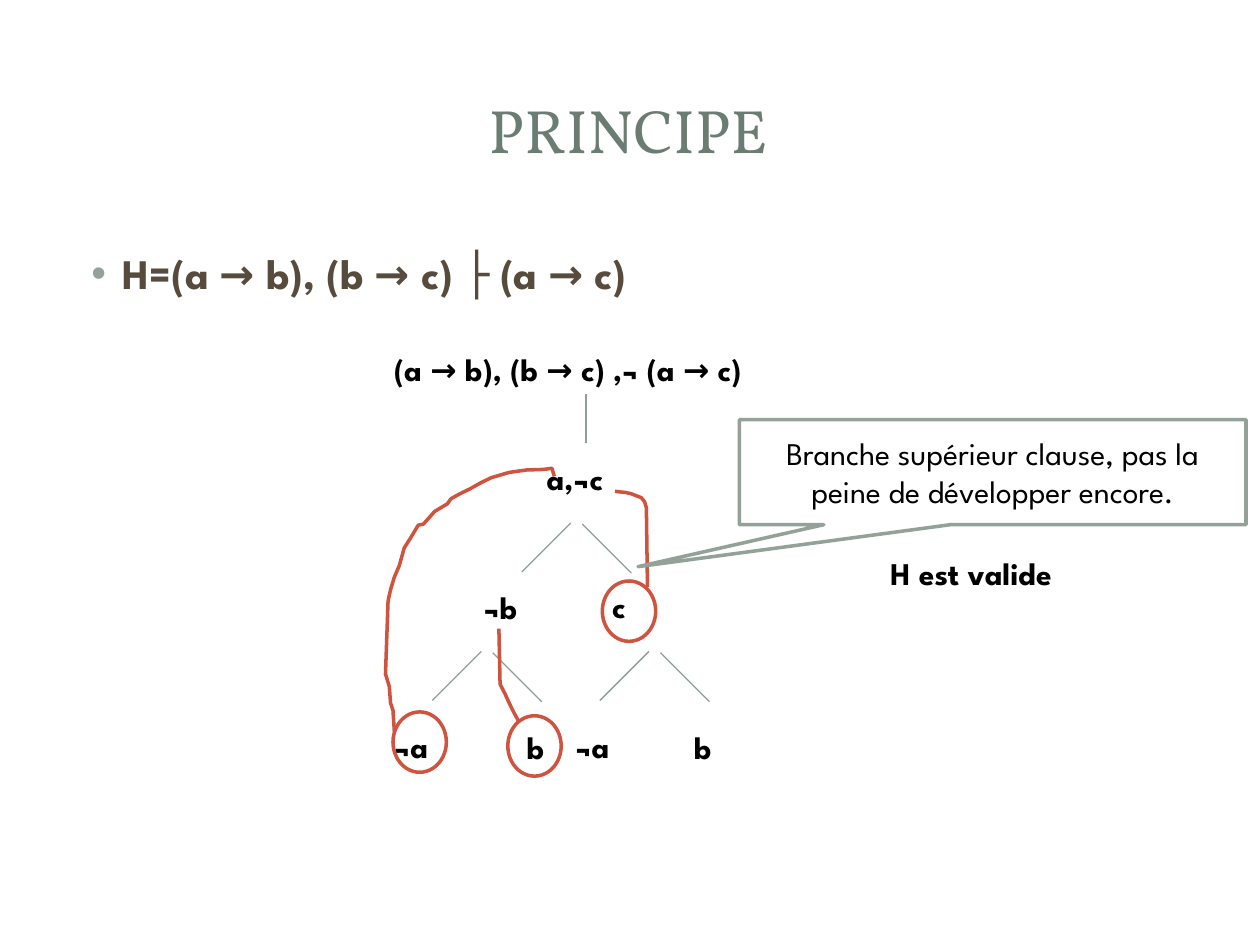
"""Build the slide that explains the principle of the proof tree."""
from dataclasses import dataclass

from lxml import etree
from pptx import Presentation, util as u
from pptx.dml.color import RGBColor
from pptx.enum import shapes, text
from pptx.oxml.ns import qn


@dataclass(frozen=True)
class Theme:
    heading: str = "Vollkorn"
    body: str = "League Spartan"
    title_ink: str = "6B7D72"
    body_ink: str = "564B3C"
    ink: str = "000000"
    accent: str = "93A299"
    branch: str = "8F9F96"
    clash: str = "CF543F"
    paper: str = "FFFFFF"
    title_size: float = 35
    body_size: float = 24
    node_size: float = 18
    branch_width: float = 0.75
    stroke_width: float = 2


class Board:
    def __init__(self, slide, theme):
        self.slide, self.theme = slide, theme

    def place(self, item, box):
        for side, value in zip(("left", "top", "width", "height"), box):
            setattr(item, side, u.Pt(value))

    def letter(self, item, words, size, ink, name=None, bold=False, align=text.PP_ALIGN.LEFT):
        paragraph = item.text_frame.paragraphs[0]
        paragraph.alignment = align
        run = paragraph.add_run()
        run.text = words
        looks = {"name": name or self.theme.body, "size": u.Pt(size), "bold": bold}
        for key, value in looks.items():
            setattr(run.font, key, value)
        run.font.color.rgb = RGBColor.from_string(ink)
        return paragraph

    def outline(self, item, ink, width):
        item.line.color.rgb = RGBColor.from_string(ink)
        item.line.width = u.Pt(width)

    def title(self, words, box):
        heading = self.slide.shapes.title
        self.place(heading, box)
        heading.text_frame.vertical_anchor = text.MSO_ANCHOR.MIDDLE
        self.letter(heading, words, self.theme.title_size, self.theme.title_ink,
                    self.theme.heading, align=text.PP_ALIGN.CENTER)

    def bullet(self, words, box):
        claim = self.slide.placeholders[1]
        self.place(claim, box)
        claim.text_frame.auto_size = text.MSO_AUTO_SIZE.NONE
        paragraph = self.letter(claim, words, self.theme.body_size, self.theme.body_ink, bold=True)
        paragraph.space_before = u.Pt(self.theme.body_size * 0.2)
        props = paragraph._p.get_or_add_pPr()
        for key, value in {"marL": u.Pt(27), "indent": u.Pt(-18)}.items():
            props.set(key, str(int(value)))
        tint = etree.SubElement(props, qn("a:buClr"))
        etree.SubElement(tint, qn("a:srgbClr"), val=self.theme.accent)
        etree.SubElement(props, qn("a:buChar"), char="•")

    def label(self, words, left, top, width):
        node = self.slide.shapes.add_textbox(*map(u.Pt, (left, top, width, 29)))
        node.text_frame.word_wrap = False
        node.text_frame.auto_size = text.MSO_AUTO_SIZE.SHAPE_TO_FIT_TEXT
        self.letter(node, words, self.theme.node_size, self.theme.ink, bold=True)

    def branch(self, x, y, dx, dy=28):
        edge = self.slide.shapes.add_connector(
            shapes.MSO_CONNECTOR.STRAIGHT, *map(u.Pt, (x, y, x + dx, y + dy)))
        self.outline(edge, self.theme.branch, self.theme.branch_width)
        etree.SubElement(edge._element.spPr, qn("a:effectLst"))

    def fork(self, x, y):
        self.branch(x, y, -28)
        self.branch(x + 6.6, y + 0.7, 28)

    def clash(self, item):
        item.shadow.inherit = False
        item.fill.background()
        self.outline(item, self.theme.clash, self.theme.stroke_width)

    def ring(self, left, top):
        self.clash(self.slide.shapes.add_shape(
            shapes.MSO_SHAPE.OVAL, *map(u.Pt, (left, top, 30.5, 34.5))))

    def trail(self, points):
        start, *rest = [(u.Pt(x), u.Pt(y)) for x, y in points]
        builder = self.slide.shapes.build_freeform(*start)
        builder.add_line_segments(rest, close=False)
        self.clash(builder.convert_to_shape())

    def callout(self, words, box, tip):
        remark = self.slide.shapes.add_shape(
            shapes.MSO_SHAPE.RECTANGULAR_CALLOUT, *map(u.Pt, box))
        for index, value in enumerate(tip):
            remark.adjustments[index] = value
        remark.shadow.inherit = False
        remark.fill.solid()
        remark.fill.fore_color.rgb = RGBColor.from_string(self.theme.paper)
        self.outline(remark, self.theme.accent, self.theme.stroke_width)
        remark.text_frame.word_wrap = True
        remark.text_frame.vertical_anchor = text.MSO_ANCHOR.MIDDLE
        self.letter(remark, words, self.theme.node_size, self.theme.ink,
                    align=text.PP_ALIGN.CENTER)


NODES = [
    ("(a → b), (b → c) ,¬ (a → c)", 218, 196.5, 248.5),
    ("a,¬c", 305.3, 258.5, 54.7),
    ("¬b", 269.3, 332.5, 38.2), ("c", 342.7, 332, 26),
    ("¬a", 218.2, 412, 38.2), ("b", 293.8, 412.5, 26.6),
    ("¬a", 321.8, 412, 38.2), ("b", 389.5, 412.5, 26.6),
    ("H est valide", 501.8, 313.2, 116),
]
FORKS = [(275, 372.3), (326.2, 298.8), (370.8, 372.3)]
CLASHES = [
    ((224.6, 406.8), [
        (225.4, 418.3), (224.6, 406), (223.2, 401.8), (222.5, 392.4), (220.3, 385.2),
        (221.8, 343.4), (223.2, 337), (225.4, 329.8), (228.2, 323.3), (231, 313.2),
        (234.7, 307.4), (239, 300.2), (242, 299.5), (248.4, 292.3), (255.6, 288),
        (257.8, 285), (262.8, 282.2), (268.6, 279.4), (275, 275.8), (280.8, 273),
        (291, 270), (301, 268.6), (310.7, 268.3), (315.4, 267.6), (316.8, 272.2)]),
    ((290.2, 409), [
        (296.6, 412.6), (293.8, 407.5), (291, 401.8), (288.7, 396.7), (285.8, 391),
        (285.1, 359.3)]),
    ((344.2, 332), [
        (370, 335.5), (369.4, 290.2), (368.4, 286.8), (366.5, 284.4), (360.7, 282.2),
        (357.8, 281.5), (351.4, 280.8)]),
]


def main():
    deck = Presentation()
    deck.slide_width, deck.slide_height = u.Pt(720), u.Pt(540)
    board = Board(deck.slides.add_slide(deck.slide_layouts[1]), Theme())
    board.title("PRINCIPE", (34, 32.5, 650, 82))
    board.bullet("H=(a → b), (b → c) ├ (a → c)", (36, 138, 648, 47))
    for node in NODES:
        board.label(*node)
    board.branch(334.8, 225.4, 0)
    for top in FORKS:
        board.fork(*top)
    for corner, points in CLASHES:
        board.ring(*corner)
        board.trail(points)
    board.callout("Branche supérieur clause, pas la peine de développer encore.",
                  (422.5, 239.8, 289.5, 60), (-0.7, 0.9))
    deck.save("out.pptx")


if __name__ == "__main__":
    main()
